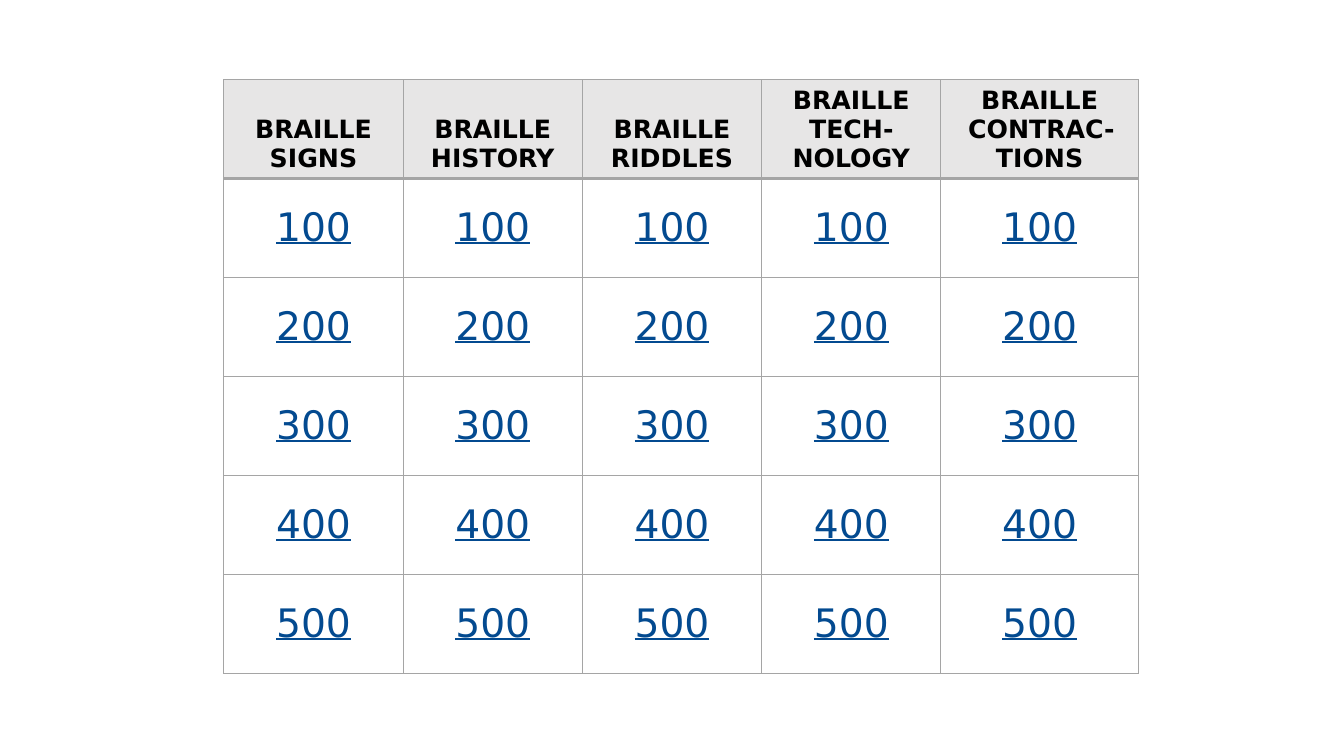
from lxml.etree import SubElement
from pptx import Presentation
from pptx.dml.color import RGBColor
from pptx.enum.text import MSO_ANCHOR, PP_ALIGN
from pptx.oxml.ns import qn
from pptx.util import Inches, Pt

COLORS = {
    "header": "E7E6E6",
    "cell": "FFFFFF",
    "border": "A5A5A5",
    "title": "000000",
    "points": "034A90",
}
FONT = "DejaVu Sans"
CATEGORIES = [
    "BRAILLE SIGNS",
    "BRAILLE HISTORY",
    "BRAILLE RIDDLES",
    "BRAILLE TECH-NOLOGY",
    "BRAILLE CONTRAC-TIONS",
]
POINTS = [100, 200, 300, 400, 500]
LAST_COLUMN_EXTRA = 0.18


def color(name):
    return RGBColor.from_string(COLORS[name])


def add_borders(cell, bottom_width):
    properties = cell._tc.get_or_add_tcPr()
    for side, width in (("L", 1), ("R", 1), ("T", 1), ("B", bottom_width)):
        line = SubElement(properties, qn(f"a:ln{side}"), w=str(Pt(width)))
        fill = SubElement(line, qn("a:solidFill"))
        SubElement(fill, qn("a:srgbClr"), val=COLORS["border"])


def fill_cell(cell, text, is_header):
    add_borders(cell, 2 if is_header else 1)
    cell.fill.solid()
    cell.fill.fore_color.rgb = color("header" if is_header else "cell")
    cell.vertical_anchor = MSO_ANCHOR.BOTTOM if is_header else MSO_ANCHOR.MIDDLE
    cell.text_frame.text = text
    para = cell.text_frame.paragraphs[0]
    para.alignment = PP_ALIGN.CENTER
    font = para.runs[0].font
    font.name = FONT
    font.size = Pt(18 if is_header else 28)
    font.bold = is_header
    font.underline = not is_header
    font.color.rgb = color("title" if is_header else "points")


def add_game_board(page, left, top, width, height):
    rows = [CATEGORIES] + [[str(value)] * len(CATEGORIES) for value in POINTS]
    frame = page.shapes.add_table(
        len(rows), len(CATEGORIES),
        Inches(left), Inches(top), Inches(width), Inches(height),
    )
    board = frame.table
    column_width = (width - LAST_COLUMN_EXTRA) / len(CATEGORIES)
    for column in board.columns:
        column.width = Inches(column_width)
    board.columns[len(CATEGORIES) - 1].width = Inches(column_width + LAST_COLUMN_EXTRA)
    for row_index, texts in enumerate(rows):
        board.rows[row_index].height = Inches(height / len(rows))
        for column_index, text in enumerate(texts):
            fill_cell(board.cell(row_index, column_index), text, row_index == 0)


def main():
    deck = Presentation()
    deck.slide_width = Inches(13.33)
    deck.slide_height = Inches(7.5)
    page = deck.slides.add_slide(deck.slide_layouts[6])
    add_game_board(page, 2.22, 0.79, 9.07, 5.89)
    deck.save("out.pptx")


if __name__ == "__main__":
    main()
